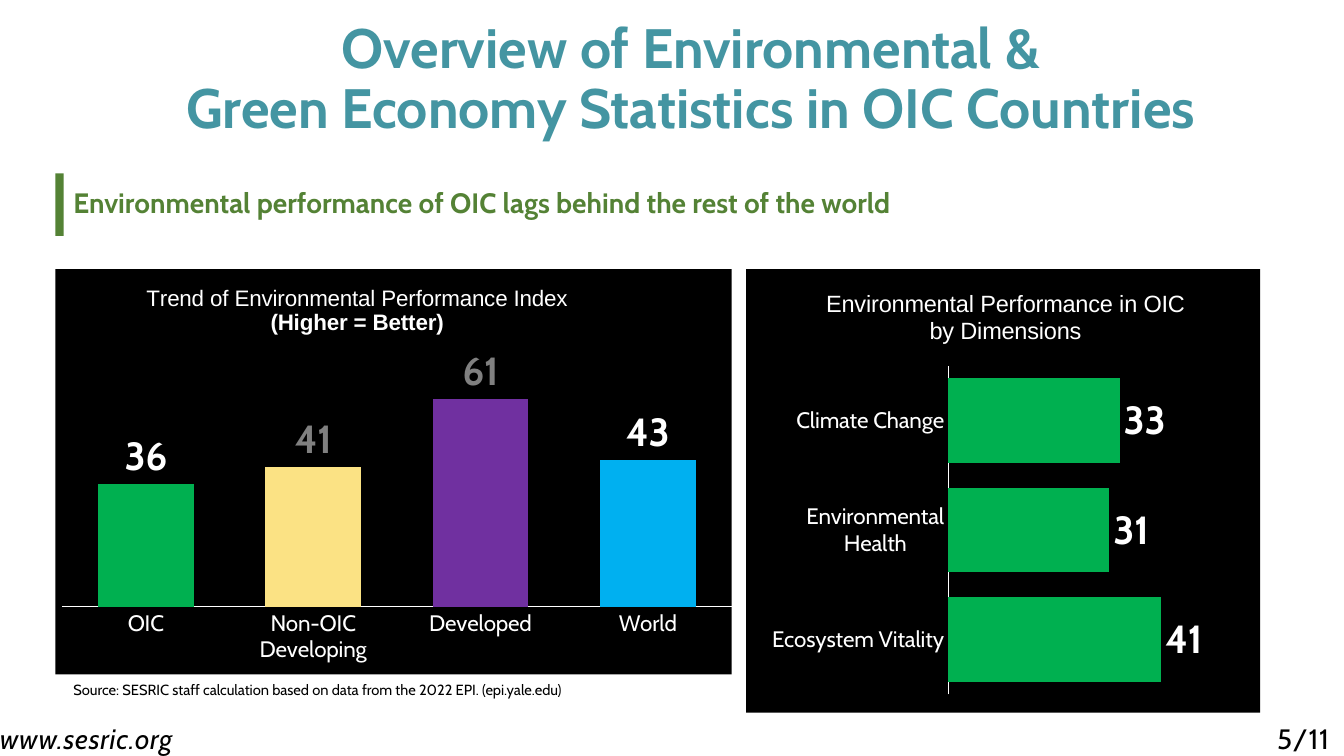
"""Builds a slide comparing environmental performance scores in two charts."""
from dataclasses import dataclass

from pptx import Presentation
from pptx.chart.data import CategoryChartData
from pptx.dml.color import RGBColor
from pptx.enum.chart import XL_CHART_TYPE, XL_LABEL_POSITION, XL_TICK_MARK
from pptx.enum.shapes import MSO_SHAPE
from pptx.enum.text import MSO_ANCHOR, MSO_AUTO_SIZE, PP_ALIGN
from pptx.oxml import parse_xml
from pptx.oxml.ns import nsdecls
from pptx.util import Inches, Pt

COLUMN, BAR = XL_CHART_TYPE.COLUMN_CLUSTERED, XL_CHART_TYPE.BAR_CLUSTERED
OUTSIDE_END, NO_TICK = XL_LABEL_POSITION.OUTSIDE_END, XL_TICK_MARK.NONE
RECTANGLE = MSO_SHAPE.RECTANGLE
MIDDLE, BOTTOM = MSO_ANCHOR.MIDDLE, MSO_ANCHOR.BOTTOM
LEFT, CENTER, JUSTIFY = PP_ALIGN.LEFT, PP_ALIGN.CENTER, PP_ALIGN.JUSTIFY
NO_AUTOFIT = MSO_AUTO_SIZE.NONE
WIDTH, HEIGHT = Inches(13.33), Inches(7.5)


@dataclass(frozen=True)
class Theme:
    """Fonts, colours and type sizes of the slide."""
    text_font: str = "Cabin"
    chart_font: str = "Arial"
    heading: str = "4495A2"
    accent: str = "548235"
    ink: str = "000000"
    paper: str = "FFFFFF"
    muted: str = "808080"
    green: str = "00B050"
    yellow: str = "FBE284"
    purple: str = "7030A0"
    blue: str = "00B0F0"
    heading_size: float = 39.6
    body_size: float = 20
    source_size: float = 10.5
    chart_size: float = 14
    category_size: float = 16
    value_size: float = 28


THEME = Theme()


def area(left, top, width, height):
    """Turn percentages of the slide into lengths."""
    return (int(WIDTH * left / 100), int(HEIGHT * top / 100),
            int(WIDTH * width / 100), int(HEIGHT * height / 100))


def style(font, size, color, name=THEME.text_font, bold=False, italic=False):
    """Format a font."""
    font.name, font.size, font.bold, font.italic = name, Pt(size), bold, italic
    font.color.rgb = RGBColor.from_string(color)


def paint(target, color):
    """Give a fill one solid colour."""
    target.fill.solid()
    target.fill.fore_color.rgb = RGBColor.from_string(color)


def add_heading(slide, words, place):
    """Fill the title placeholder."""
    heading = slide.shapes.title
    heading.left, heading.top, heading.width, heading.height = place
    frame = heading.text_frame
    frame.text = words
    frame.auto_size, frame.vertical_anchor = NO_AUTOFIT, BOTTOM
    frame.margin_left = frame.margin_right = frame.margin_top = frame.margin_bottom = 0
    line = frame.paragraphs[0]
    line.alignment, line.line_spacing = CENTER, 0.9
    style(line.font, THEME.heading_size, THEME.heading, bold=True)


def add_words(slide, words, place, size, color, anchor=MIDDLE, align=LEFT,
              bold=False, italic=False, spacing=0.9):
    """Add a wrapped text box with one paragraph."""
    frame = slide.shapes.add_textbox(*place).text_frame
    frame.word_wrap, frame.vertical_anchor = True, anchor
    frame.text = words
    line = frame.paragraphs[0]
    line.alignment, line.line_spacing = align, spacing
    style(line.font, size, color, bold=bold, italic=italic)
    return frame


def add_footer(slide, words, place, align=LEFT, italic=False):
    """Add slightly tracked text along the lower edge."""
    frame = add_words(slide, words, place, THEME.body_size, THEME.ink, BOTTOM,
                      align, italic=italic)
    frame.margin_left = frame.margin_right = frame.margin_top = frame.margin_bottom = 0
    for run in frame.paragraphs[0].runs:
        run.font._element.set("spc", "50")


def add_marker(slide, place):
    """Add the accent strip beside the subheading."""
    marker = slide.shapes.add_shape(RECTANGLE, *place)
    marker.shadow.inherit = False
    paint(marker, THEME.accent)
    marker.line.fill.background()


def set_layout(parent, index, target="", **shares):
    """Place a chart part by shares of the chart area."""
    for old in parent.xpath("./c:layout"):
        parent.remove(old)
    inner = f'<c:layoutTarget val="{target}"/>' if target else ""
    modes = "".join(f'<c:{key}Mode val="edge"/>' for key in "xy")
    values = "".join(f'<c:{key} val="{value}"/>' for key, value in shares.items())
    parent.insert(index, parse_xml(
        f'<c:layout {nsdecls("c")}><c:manualLayout>{inner}{modes}{values}'
        '</c:manualLayout></c:layout>'))


def add_chart_title(chart, lines, size, x, y):
    """Write the chart title from (text, bold) lines."""
    title = chart.chart_title
    frame = title.text_frame
    frame.text = "\n".join(words for words, _ in lines)
    for paragraph, (_, bold) in zip(frame.paragraphs, lines):
        style(paragraph.font, size, THEME.paper, THEME.chart_font, bold)
    set_layout(title._element, 1, x=x, y=y)


def add_scores(slide, kind, place, scores, maximum, gap, color, plot_area):
    """Add a one-series chart on a black panel."""
    data = CategoryChartData(number_format="0")
    data.categories = list(scores)
    data.add_series("Series 1", scores.values())
    chart = slide.shapes.add_chart(kind, *place, data).chart
    chart.has_legend = False
    style(chart.font, THEME.chart_size, THEME.paper, THEME.chart_font)
    chart._chartSpace.xpath("./c:chart")[0].addnext(parse_xml(
        f'<c:spPr {nsdecls("c", "a")}><a:solidFill><a:srgbClr val="{THEME.ink}"/>'
        '</a:solidFill><a:ln><a:noFill/></a:ln></c:spPr>'))
    set_layout(chart._chartSpace.xpath(".//c:plotArea")[0], 0, "inner", **plot_area)

    values, categories = chart.value_axis, chart.category_axis
    values.minimum_scale, values.maximum_scale = 0, maximum
    values.has_major_gridlines = values.visible = False
    categories.major_tick_mark = categories.minor_tick_mark = NO_TICK
    categories.format.line.width = Pt(0.75)
    categories.format.line.color.rgb = RGBColor.from_string(THEME.paper)
    style(categories.tick_labels.font, THEME.category_size, THEME.paper)

    plot = chart.plots[0]
    plot.gap_width, plot.vary_by_categories = gap, False
    series = plot.series[0]
    series.invert_if_negative = False
    paint(series.format, color)
    labels = series.data_labels
    labels.show_value, labels.position = True, OUTSIDE_END
    labels.number_format, labels.number_format_is_linked = "0", False
    style(labels.font, THEME.value_size, THEME.paper, bold=True)
    return chart


def add_group_chart(slide):
    """Compare the index across country groups."""
    scores = {"OIC": 36, "Non-OIC Developing": 41, "Developed": 61, "World": 43}
    chart = add_scores(slide, COLUMN, area(4.13, 35.6, 50.34, 53.6), scores, 70, 75,
                       THEME.yellow, dict(x=0.01, y=0.245, w=0.99, h=0.588))
    add_chart_title(chart, [("Trend of Environmental Performance Index", False),
                            ("(Higher = Better)", True)], 16, 0.13, 0.03)
    points = chart.plots[0].series[0].points
    for index, color in {0: THEME.green, 2: THEME.purple, 3: THEME.blue}.items():
        paint(points[index].format, color)
    for index in (1, 2):
        label = points[index].data_label
        style(label.font, THEME.value_size, THEME.muted, bold=True)
        label.position = OUTSIDE_END


def add_dimension_chart(slide):
    """Compare the dimensions of the index."""
    scores = {"Ecosystem Vitality": 41, "Environmental Health": 31, "Climate Change": 33}
    chart = add_scores(slide, BAR, area(55.51, 35.6, 38.26, 58.67), scores, 60, 30,
                       THEME.green, dict(x=0.393, y=0.218, w=0.607, h=0.741))
    add_chart_title(chart, [("Environmental Performance in OIC", False),
                            ("by Dimensions", False)], 16.8, 0.15, 0.04)


def main():
    """Build and save the slide."""
    deck = Presentation()
    deck.slide_width, deck.slide_height = WIDTH, HEIGHT
    slide = deck.slides.add_slide(deck.slide_layouts[5])
    add_heading(slide, "Overview of Environmental &\vGreen Economy Statistics in OIC Countries",
                area(9.15, 0.53, 84.47, 18))
    add_footer(slide, "www.sesric.org", area(0, 96, 14.4, 4), italic=True)
    add_footer(slide, "5/11", area(93.92, 96, 6.08, 4), CENTER)
    add_words(slide, "Environmental performance of OIC lags behind the rest of the world",
              area(4.73, 22.93, 78.32, 8.27), THEME.body_size, THEME.accent, bold=True)
    add_marker(slide, area(4.13, 22.93, 0.6, 8.27))
    add_group_chart(slide)
    add_dimension_chart(slide)
    add_words(slide, "Source: SESRIC staff calculation based on data from the 2022 EPI. (epi.yale.edu)",
              area(4.73, 89.07, 49.06, 3.87), THEME.source_size, THEME.ink,
              align=JUSTIFY, spacing=1.15)
    deck.save("out.pptx")


if __name__ == "__main__":
    main()
